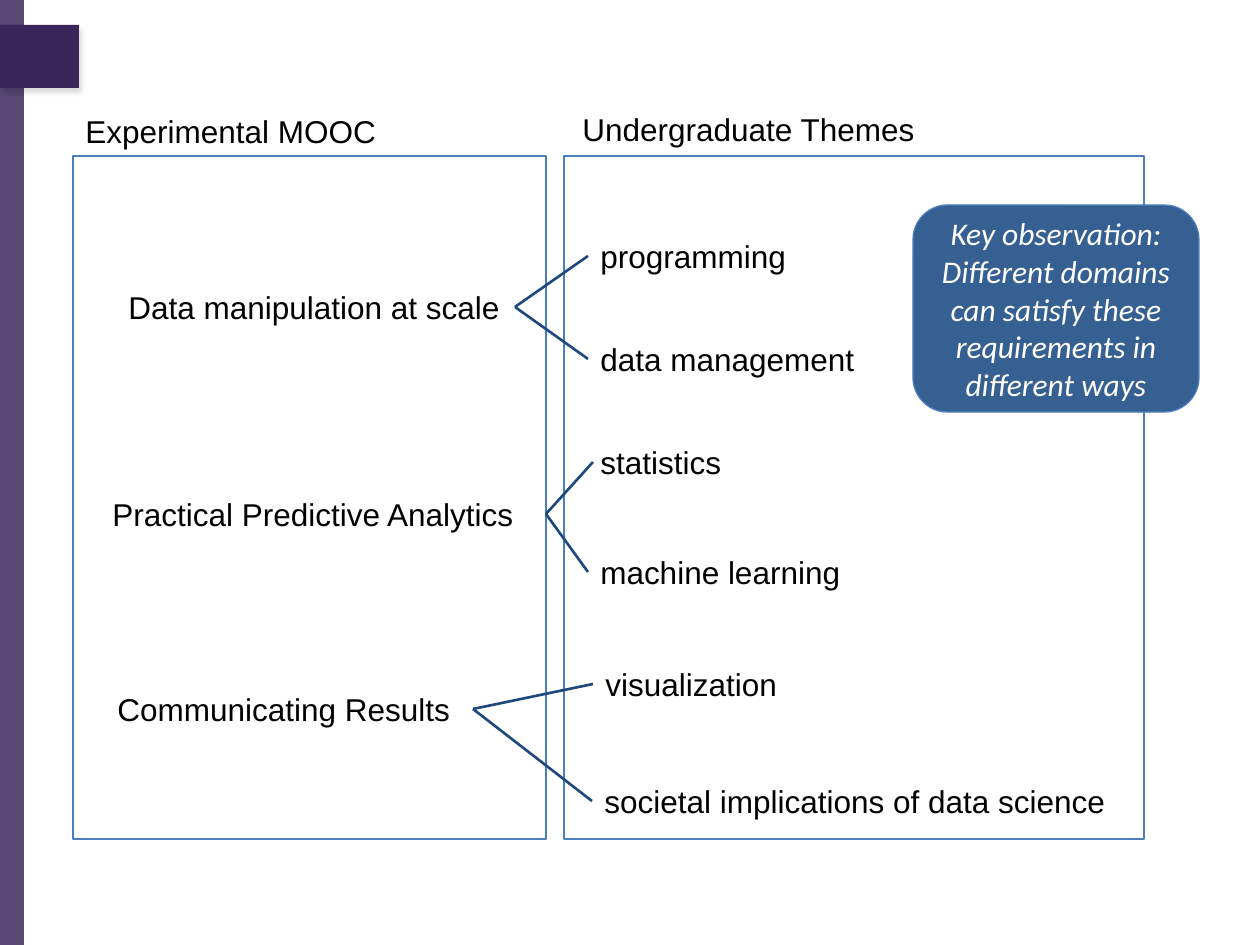
from lxml.etree import SubElement
from pptx import Presentation
from pptx.dml.color import RGBColor
from pptx.enum.shapes import MSO_CONNECTOR, MSO_SHAPE
from pptx.enum.text import MSO_ANCHOR, PP_ALIGN
from pptx.oxml.ns import qn
from pptx.util import Pt

SCALE = 914400 / 126
TEXT_HEIGHT = 50


def color(value):
    return RGBColor.from_string(value)


def emu(*lengths):
    return [round(length * SCALE) for length in lengths]


presentation = Presentation()
presentation.slide_width, presentation.slide_height = emu(1260, 945)
slide = presentation.slides.add_slide(presentation.slide_layouts[6])
shapes = slide.shapes

sidebar = shapes.add_shape(MSO_SHAPE.RECTANGLE, *emu(0, 0, 24, 945))
tab = shapes.add_shape(MSO_SHAPE.RECTANGLE, *emu(0, 25, 79, 63))
for shape in (sidebar, tab):
    shape.shadow.inherit = False
    shape.fill.solid()
    shape.fill.fore_color.rgb = color("39275B")
    shape.line.fill.background()

sidebar_color = sidebar._element.spPr.find(qn("a:solidFill"))[0]
SubElement(sidebar_color, qn("a:alpha"), val="85000")
effects = tab._element.spPr.find(qn("a:effectLst"))
tab_shadow = SubElement(effects, qn("a:outerShdw"), blurRad=str(Pt(3)), dist=str(Pt(3)), dir="3600000")
shadow_color = SubElement(tab_shadow, qn("a:srgbClr"), val="000000")
SubElement(shadow_color, qn("a:alpha"), val="15000")

for left, width in [(73, 473), (564, 580)]:
    panel = shapes.add_shape(MSO_SHAPE.RECTANGLE, *emu(left, 156, width, 683))
    panel.shadow.inherit = False
    panel.fill.background()
    panel.line.color.rgb = color("4B7EBC")
    panel.line.width = Pt(1)

headings = [
    ("Experimental MOOC", 73, 106, 383),
    ("Undergraduate Themes", 570, 104, 383),
]
courses = [
    ("Data manipulation at scale", 116, 282, 399),
    ("Practical Predictive Analytics", 100, 489, 446),
    ("Communicating Results", 105, 684, 368),
]
themes = [
    ("programming", 588, 231, 213),
    ("data management", 588, 334, 282),
    ("statistics", 588, 437, 147),
    ("machine learning", 588, 547, 289),
    ("visualization", 593, 659, 200),
    ("societal implications of data science", 592, 776, 532),
]
for group in (headings, courses, themes):
    for text, left, top, width in group:
        label = shapes.add_textbox(*emu(left, top, width, TEXT_HEIGHT))
        label.text_frame.word_wrap = group is not themes
        run = label.text_frame.paragraphs[0].add_run()
        run.text = text
        run.font.name = "Arial"
        run.font.size = Pt(18)
        run.font.color.rgb = color("000000")

line_ends = [588, 588, 593, 588, 593, 592]
for index, (theme, end) in enumerate(zip(themes, line_ends)):
    name, left, top, width = courses[index // 2]
    start_y, end_y = top + TEXT_HEIGHT // 2, theme[2] + TEXT_HEIGHT // 2
    connector = shapes.add_connector(MSO_CONNECTOR.STRAIGHT, *emu(left + width, start_y, end, end_y))
    connector.line.color.rgb = color("1F497D")
    connector.line.width = Pt(1.5)
    SubElement(connector._element.spPr, qn("a:effectLst"))

callout = shapes.add_shape(MSO_SHAPE.ROUNDED_RECTANGLE, *emu(913, 205, 286, 207))
callout.shadow.inherit = False
callout.fill.solid()
callout.fill.fore_color.rgb = color("376092")
callout.line.color.rgb = color("4B7EBC")
callout.line.width = Pt(0.75)
callout.text_frame.word_wrap = True
callout.text_frame.vertical_anchor = MSO_ANCHOR.MIDDLE
paragraph = callout.text_frame.paragraphs[0]
paragraph.alignment = PP_ALIGN.CENTER
run = paragraph.add_run()
run.text = "Key observation: Different domains can satisfy these requirements in different ways"
run.font.name = "Calibri"
run.font.size = Pt(18)
run.font.italic = True
run.font.color.rgb = color("FFFFFF")

presentation.save("out.pptx")
